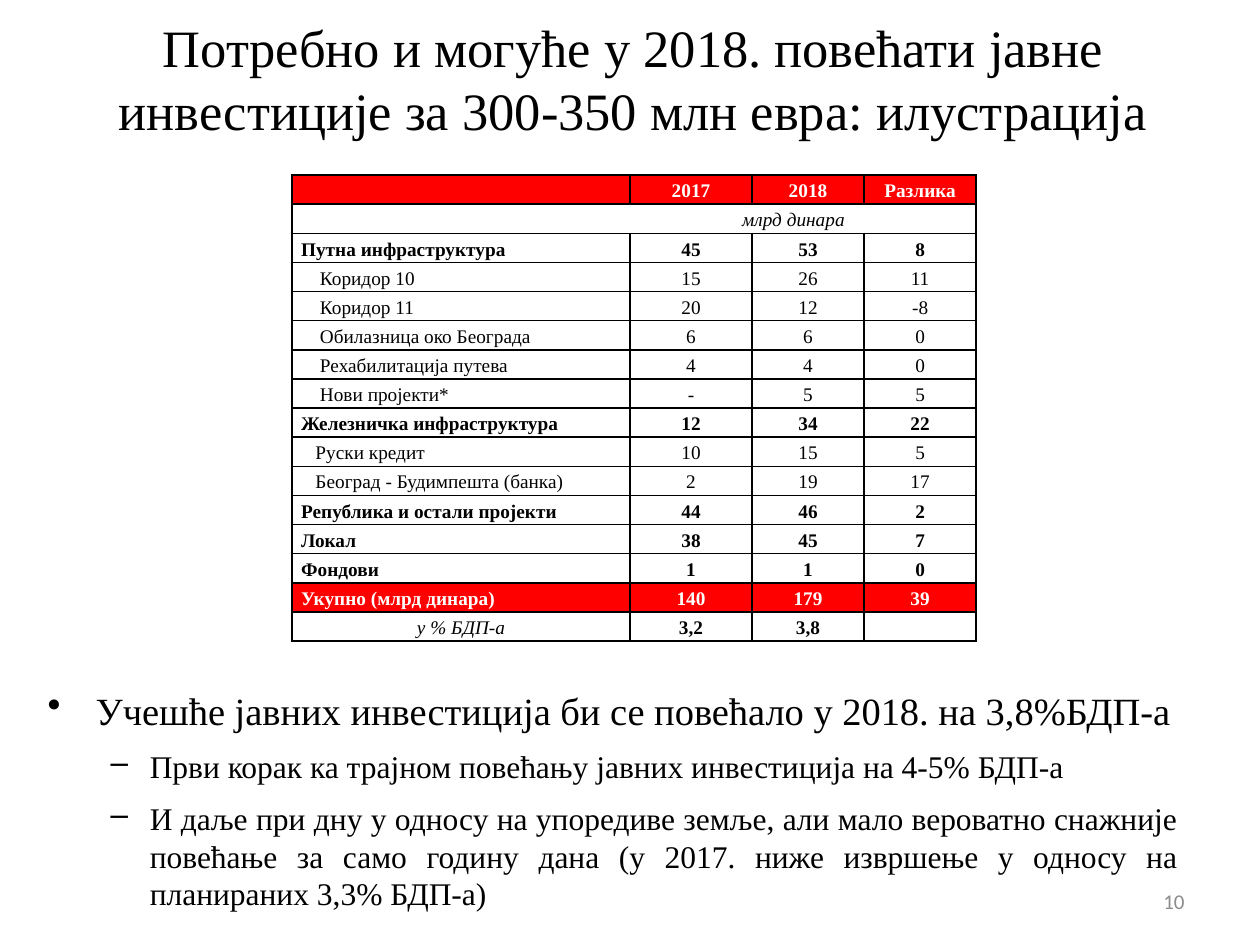
from dataclasses import dataclass
from typing import Optional

import pptx
import pptx.dml.color
import pptx.enum.text
import pptx.oxml
import pptx.oxml.ns
import pptx.util

Cm = pptx.util.Cm
Pt = pptx.util.Pt
RGBColor = pptx.dml.color.RGBColor
Align = pptx.enum.text.PP_ALIGN
Anchor = pptx.enum.text.MSO_ANCHOR

BLACK = RGBColor(0x00, 0x00, 0x00)
WHITE = RGBColor(0xFF, 0xFF, 0xFF)
RED = RGBColor(0xFF, 0x00, 0x00)
GRAY = RGBColor(0x8C, 0x8C, 0x8C)
SERIF = "Times New Roman"
SANS = "Calibri"


@dataclass(frozen=True)
class Box:
    left: float
    top: float
    width: float
    height: float


@dataclass(frozen=True)
class Style:
    size: float
    color: RGBColor = BLACK
    font: str = SERIF
    bold: bool = False
    italic: bool = False
    align: Align = Align.LEFT
    margin: float = 0
    indent: float = 0
    bullet: Optional[str] = None
    level: int = 0
    spacing: float = 0


@dataclass(frozen=True)
class Row:
    label: str
    values: tuple[str, ...]
    bold: bool = False
    indent: float = 0
    highlighted: bool = False
    label_italic: bool = False
    label_align: Align = Align.LEFT


TITLE = "Потребно и могуће у 2018. повећати јавне инвестиције за 300-350 млн евра: илустрација"
UNIT = "млрд динара"
UNIT_ROW = 1
ROWS = [
    Row("", ("2017", "2018", "Разлика"), bold=True, highlighted=True),
    Row(UNIT, ("", "", ""), label_italic=True),
    Row("Путна инфраструктура", ("45", "53", "8"), bold=True),
    Row("Коридор 10", ("15", "26", "11"), indent=0.38),
    Row("Коридор 11", ("20", "12", "-8"), indent=0.38),
    Row("Обилазница око Београда", ("6", "6", "0"), indent=0.38),
    Row("Рехабилитација путева", ("4", "4", "0"), indent=0.38),
    Row("Нови пројекти*", ("-", "5", "5"), indent=0.38),
    Row("Железничка инфраструктура", ("12", "34", "22"), bold=True),
    Row("Руски кредит", ("10", "15", "5"), indent=0.29),
    Row("Београд - Будимпешта (банка)", ("2", "19", "17"), indent=0.29),
    Row("Република и остали пројекти", ("44", "46", "2"), bold=True),
    Row("Локал", ("38", "45", "7"), bold=True),
    Row("Фондови", ("1", "1", "0"), bold=True),
    Row("Укупно (млрд динара)", ("140", "179", "39"), bold=True, highlighted=True),
    Row("у % БДП-а", ("3,2", "3,8", ""), bold=True, label_italic=True, label_align=Align.CENTER),
]
COLUMN_WIDTHS = [6.81, 2.46, 2.26, 2.26]
TABLE_BOX = Box(5.89, 3.53, sum(COLUMN_WIDTHS), 9.4)

MAIN_POINT = Style(22, align=Align.JUSTIFY, margin=0.97, indent=-0.97, bullet="•", spacing=4)
SUB_POINT = Style(18, align=Align.JUSTIFY, margin=2.06, indent=-0.79, bullet="–", level=1, spacing=4)
POINTS = [
    ("Учешће јавних инвестиција би се повећало у 2018. на 3,8%БДП-а", MAIN_POINT),
    ("Први корак ка трајном повећању јавних инвестиција на 4-5% БДП-а", SUB_POINT),
    (
        "И даље при дну у односу на упоредиве земље, али мало вероватно снажније повећање "
        "за само годину дана (у 2017. ниже извршење у односу на планираних 3,3% БДП-а)",
        SUB_POINT,
    ),
]


def write_paragraph(paragraph, text: str, style: Style) -> None:
    if text:
        paragraph.text = text
    paragraph.alignment = style.align
    paragraph.level = style.level
    paragraph.space_before = paragraph.space_after = Pt(style.spacing)
    properties = paragraph._p.get_or_add_pPr()
    properties.set("marL", str(Cm(style.margin)))
    properties.set("indent", str(Cm(style.indent)))
    if style.bullet:
        bullet = pptx.oxml.parse_xml(
            f'<a:buChar {pptx.oxml.ns.nsdecls("a")} char="{style.bullet}"/>'
        )
        properties.append(bullet)
    font = paragraph.font
    font.name = style.font
    font.size = Pt(style.size)
    font.bold = style.bold
    font.italic = style.italic
    font.color.rgb = style.color


def add_text(slide, box: Box, content: list[tuple[str, Style]], anchor: Anchor) -> None:
    shape = slide.shapes.add_textbox(Cm(box.left), Cm(box.top), Cm(box.width), Cm(box.height))
    frame = shape.text_frame
    frame.word_wrap = True
    frame.vertical_anchor = anchor
    for index, (text, style) in enumerate(content):
        paragraph = frame.add_paragraph() if index else frame.paragraphs[0]
        write_paragraph(paragraph, text, style)


def add_borders(cell) -> None:
    properties = cell._tc.get_or_add_tcPr()
    for side in ("lnL", "lnR", "lnT", "lnB"):
        properties.append(pptx.oxml.parse_xml(
            f'<a:{side} {pptx.oxml.ns.nsdecls("a")} w="{Pt(1)}">'
            f'<a:solidFill><a:srgbClr val="{BLACK}"/></a:solidFill></a:{side}>'
        ))


def fill_cell(cell, text: str, style: Style, background: RGBColor) -> None:
    add_borders(cell)
    cell.fill.solid()
    cell.fill.fore_color.rgb = background
    cell.vertical_anchor = Anchor.MIDDLE
    cell.margin_left = cell.margin_right = Cm(0.18)
    cell.margin_top = cell.margin_bottom = Cm(0)
    paragraph = cell.text_frame.paragraphs[0]
    paragraph.line_spacing = 1.15
    write_paragraph(paragraph, text, style)
    if not text:
        paragraph._p.get_or_add_endParaRPr().set("sz", str(style.size * 100))


def add_investment_table(slide, box: Box, rows: list[Row]) -> None:
    frame = slide.shapes.add_table(
        len(rows), len(COLUMN_WIDTHS), Cm(box.left), Cm(box.top), Cm(box.width), Cm(box.height)
    )
    table = frame.table
    table.horz_banding = False
    table.first_row = False
    for column, width in zip(table.columns, COLUMN_WIDTHS):
        column.width = Cm(width)
    for row_index, row in enumerate(rows):
        table.rows[row_index].height = Cm(box.height / len(rows))
        background, color = (RED, WHITE) if row.highlighted else (WHITE, BLACK)
        label_style = Style(
            11, color, bold=row.bold and not row.label_italic, italic=row.label_italic,
            align=row.label_align, indent=row.indent,
            margin=8.89 if row_index == UNIT_ROW else 0,
        )
        value_style = Style(11, color, bold=row.bold, align=Align.CENTER)
        fill_cell(table.cell(row_index, 0), row.label, label_style, background)
        for column_index, value in enumerate(row.values, start=1):
            fill_cell(table.cell(row_index, column_index), value, value_style, background)
    table.cell(UNIT_ROW, 0).merge(table.cell(UNIT_ROW, len(COLUMN_WIDTHS) - 1))


def main() -> None:
    presentation = pptx.Presentation()
    presentation.slide_width = Cm(25.4)
    presentation.slide_height = Cm(19.05)
    slide = presentation.slides.add_slide(presentation.slide_layouts[6])
    add_text(slide, Box(0.51, 0.41, 24.51, 2.34),
             [(TITLE, Style(30, align=Align.CENTER))], Anchor.MIDDLE)
    add_text(slide, Box(18.21, 17.65, 5.92, 1.02),
             [("10", Style(12, GRAY, SANS, align=Align.RIGHT))], Anchor.MIDDLE)
    add_text(slide, Box(0.71, 13.72, 23.29, 4.8), POINTS, Anchor.TOP)
    add_investment_table(slide, TABLE_BOX, ROWS)
    presentation.save("out.pptx")


if __name__ == "__main__":
    main()
